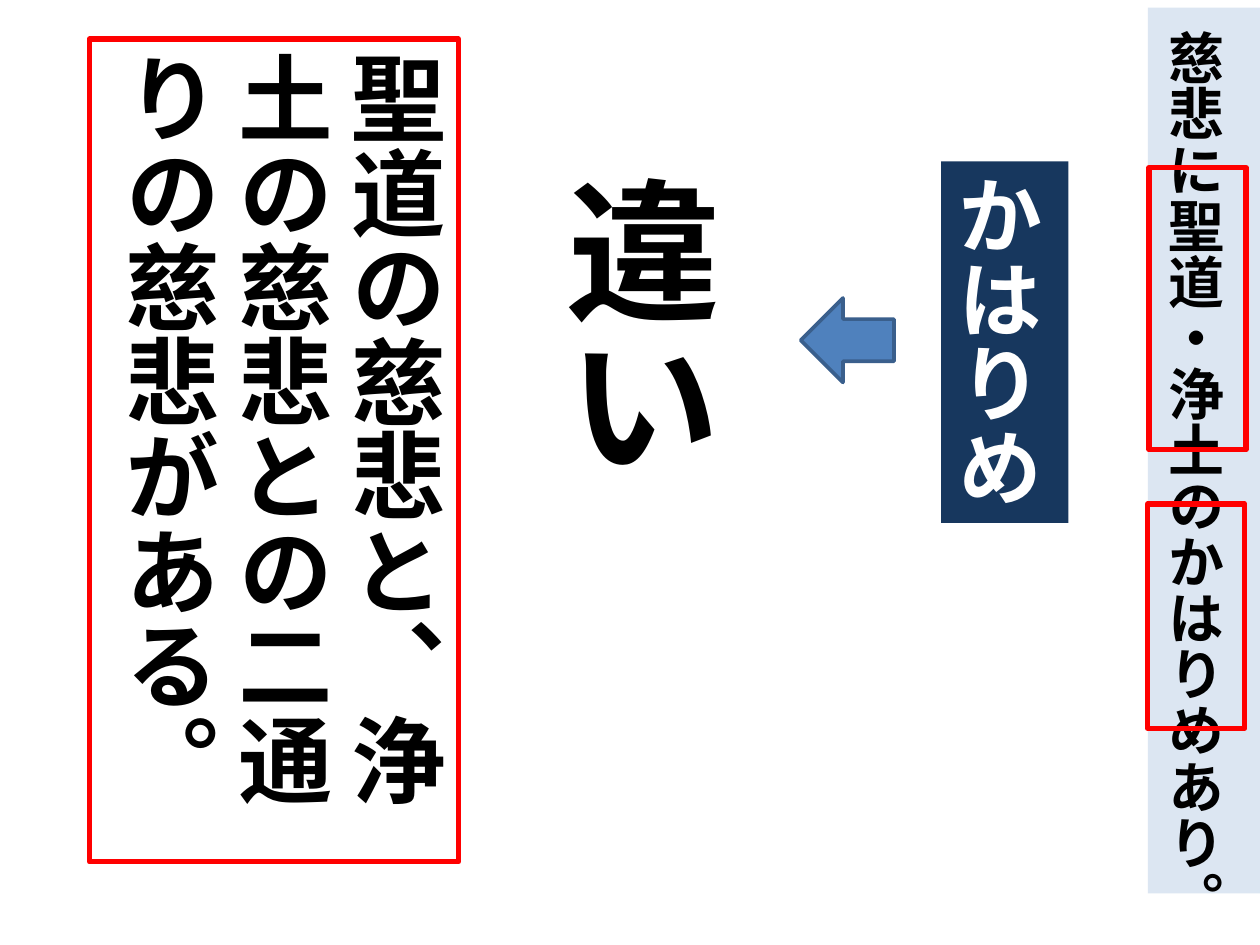
from dataclasses import dataclass
from typing import Optional

from pptx import Presentation
from pptx.dml.color import RGBColor
from pptx.enum.shapes import MSO_SHAPE as Shape
from pptx.enum.text import MSO_ANCHOR as Anchor, MSO_AUTO_SIZE as AutoSize, PP_ALIGN as Align
from pptx.util import Inches, Pt

COLORS = {
    "pale": "DCE6F2",
    "navy": "17375E",
    "blue": "4F81BD",
    "edge": "3A5F8C",
    "red": "FF0000",
    "black": "000000",
    "white": "FFFFFF",
}
FONT = "Calibri"


@dataclass
class Area:
    left: float
    top: float
    width: float
    height: float


@dataclass
class Block:
    area: Area
    fill: Optional[str] = None
    line: Optional[str] = None
    weight: float = 3
    kind: Shape = Shape.RECTANGLE
    rotation: float = 0


@dataclass
class VerticalText:
    text: str
    size: float
    color: str = "black"
    align: Align = Align.LEFT
    anchor: Anchor = Anchor.TOP
    spacing: float = 1
    grow: bool = True
    right_inset: float = 0.1


def rgb(name: str) -> RGBColor:
    return RGBColor.from_string(COLORS[name])


def bounds(prs, area: Area) -> list[int]:
    w, h = prs.slide_width, prs.slide_height
    shares = ((area.left, w), (area.top, h), (area.width, w), (area.height, h))
    return [round(share * side / 100) for share, side in shares]


def draw_block(prs, s, block: Block):
    sp = s.shapes.add_shape(block.kind, *bounds(prs, block.area))
    sp.shadow.inherit = False
    sp.rotation = block.rotation
    if block.fill:
        sp.fill.solid()
        sp.fill.fore_color.rgb = rgb(block.fill)
    else:
        sp.fill.background()
    if block.line:
        sp.line.color.rgb = rgb(block.line)
        sp.line.width = Pt(block.weight)
    else:
        sp.line.fill.background()
    return sp


def write_vertical(sp, content: VerticalText) -> None:
    tf = sp.text_frame
    tf.word_wrap = True
    tf.auto_size = AutoSize.SHAPE_TO_FIT_TEXT if content.grow else AutoSize.NONE
    tf.vertical_anchor = content.anchor
    tf.margin_left, tf.margin_right = Inches(0.1), Inches(content.right_inset)
    tf.margin_top = tf.margin_bottom = Inches(0.05)
    tf._txBody.bodyPr.set("vert", "eaVert")
    p = tf.paragraphs[0]
    p.alignment = content.align
    p.line_spacing = content.spacing
    r = p.add_run()
    r.text = content.text
    r.font.name = FONT
    r.font.size = Pt(content.size)
    r.font.bold = True
    r.font.color.rgb = rgb(content.color)


def main() -> None:
    prs = Presentation()
    prs.slide_width, prs.slide_height = Inches(10), Inches(7.5)
    s = prs.slides.add_slide(prs.slide_layouts[5])

    verse = s.shapes.title
    verse.left, verse.top, verse.width, verse.height = bounds(prs, Area(91.1, 0.8, 9, 93.73))
    verse.fill.solid()
    verse.fill.fore_color.rgb = rgb("pale")
    write_vertical(verse, VerticalText("慈悲に聖道・浄土のかはりめあり。", 32, align=Align.CENTER, spacing=1.3))

    draw_block(prs, s, Block(Area(91.1, 53.33, 7.7, 23.73), line="red"))

    term = draw_block(prs, s, Block(Area(74.7, 17.07, 10.1, 38.27), fill="navy"))
    write_vertical(term, VerticalText("かはりめ", 48, "white", anchor=Anchor.MIDDLE, grow=False, right_inset=0.16))

    draw_block(prs, s, Block(Area(63.9, 31.07, 6.7, 9.87), "blue", "edge", 2.08, Shape.DOWN_ARROW, 90))

    meaning = s.shapes.add_textbox(*bounds(prs, Area(42.3, 17.07, 16.8, 38)))
    write_vertical(meaning, VerticalText("違い", 88, anchor=Anchor.MIDDLE))

    summary = draw_block(prs, s, Block(Area(7.1, 4.13, 29.3, 87.07), line="red"))
    write_vertical(summary, VerticalText("聖道の慈悲と、浄土の慈悲との二通りの慈悲がある。", 54))

    draw_block(prs, s, Block(Area(91.2, 17.73, 7.7, 29.87), line="red"))

    prs.save("out.pptx")


if __name__ == "__main__":
    main()
